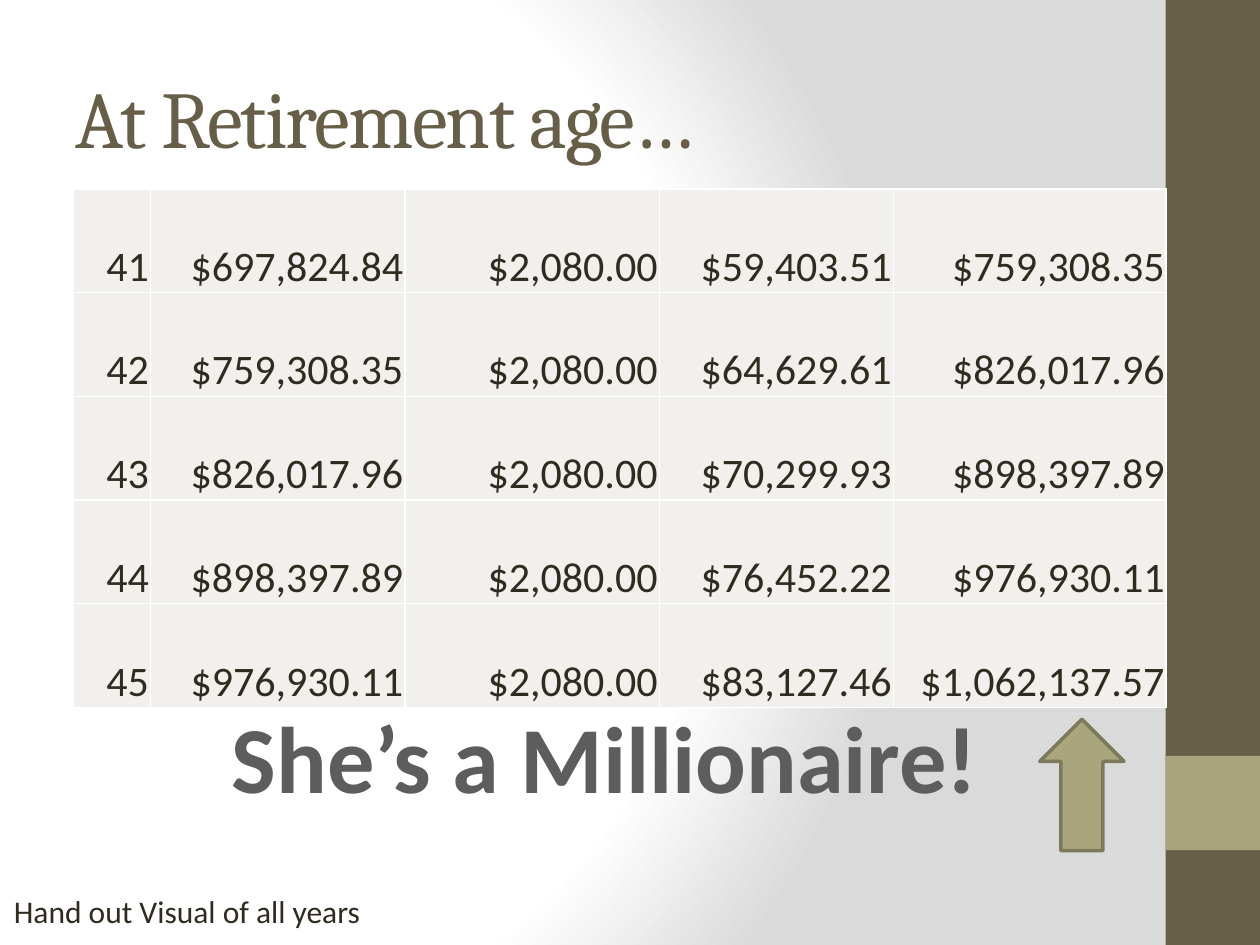
import lxml.etree
import pptx
import pptx.dml.color
import pptx.enum.shapes
import pptx.enum.text
import pptx.oxml
import pptx.oxml.ns
import pptx.util

Cm = pptx.util.Cm
Pt = pptx.util.Pt
ALIGN = pptx.enum.text.PP_ALIGN
ANCHOR = pptx.enum.text.MSO_ANCHOR
AUTO_SIZE = pptx.enum.text.MSO_AUTO_SIZE
SHAPE = pptx.enum.shapes.MSO_SHAPE

TITLE = "At Retirement age…"
HEADLINE = "She’s a Millionaire!"
HANDOUT_NOTE = "Hand out Visual of all years"
# Year, opening balance, deposit, interest, closing balance
SAVINGS = [
    ("41", "$697,824.84", "$2,080.00", "$59,403.51", "$759,308.35"),
    ("42", "$759,308.35", "$2,080.00", "$64,629.61", "$826,017.96"),
    ("43", "$826,017.96", "$2,080.00", "$70,299.93", "$898,397.89"),
    ("44", "$898,397.89", "$2,080.00", "$76,452.22", "$976,930.11"),
    ("45", "$976,930.11", "$2,080.00", "$83,127.46", "$1,062,137.57"),
]
COLUMN_WIDTHS = (1.55, 5.13, 5.13, 4.72, 5.5)
ROW_HEIGHT = 2.09

COLORS = {
    "brown": "675E47",
    "olive": "A9A57C",
    "olive_line": "7D7A5C",
    "text": "2F2B20",
    "cell": "F1F0EC",
    "white": "FFFFFF",
}
BACKGROUND_STOPS = [(0, "FFFFFF"), (75, "FFFFFF"), (100, "DADADA")]
HEADLINE_STOPS = [(0, "555555"), (49, "5D5D5D"), (50, "000000"), (95, "000000"), (100, "000000")]
BACKGROUND_PATH = '<a:path path="circle"><a:fillToRect l="20000" t="50000" r="100000" b="50000"/></a:path>'
HEADLINE_DIRECTION = '<a:lin ang="5400000" scaled="0"/>'


def rgb(name):
    return pptx.dml.color.RGBColor.from_string(COLORS[name])


def gradient(stops, direction):
    stop_xml = "".join(
        f'<a:gs pos="{position * 1000}"><a:srgbClr val="{color}"/></a:gs>' for position, color in stops
    )
    return pptx.oxml.parse_xml(
        f'<a:gradFill {pptx.oxml.ns.nsdecls("a")} rotWithShape="1">'
        f"<a:gsLst>{stop_xml}</a:gsLst>{direction}</a:gradFill>"
    )


def solid_line(tag, points, color):
    return pptx.oxml.parse_xml(
        f'<a:{tag} {pptx.oxml.ns.nsdecls("a")} w="{Pt(points)}">'
        f'<a:solidFill><a:srgbClr val="{COLORS[color]}"/></a:solidFill></a:{tag}>'
    )


def format_text(paragraph, font_name, size, color=None, align=ALIGN.LEFT):
    """Format every run; without a color the run keeps its own fill."""
    paragraph.alignment = align
    for run in paragraph.runs:
        run.font.name = font_name
        run.font.size = Pt(size)
        if color:
            run.font.color.rgb = rgb(color)


def add_block(slide, preset, box, color):
    shape = slide.shapes.add_shape(preset, *map(Cm, box))
    shape.shadow.inherit = False
    shape.fill.solid()
    shape.fill.fore_color.rgb = rgb(color)
    shape.line.fill.background()
    return shape


def add_text(slide, box, text, wrap):
    text_frame = slide.shapes.add_textbox(*map(Cm, box)).text_frame
    text_frame.word_wrap = wrap
    text_frame.auto_size = AUTO_SIZE.SHAPE_TO_FIT_TEXT
    text_frame.text = text
    return text_frame.paragraphs[0]


def set_background(slide):
    slide.background.fill.solid()
    solid_fill = next(slide.background._cSld.iter(pptx.oxml.ns.qn("a:solidFill")))
    solid_fill.getparent().replace(solid_fill, gradient(BACKGROUND_STOPS, BACKGROUND_PATH))


def add_title(slide):
    title = slide.shapes.title
    title.left, title.top, title.width, title.height = map(Cm, (1.27, 0.76, 21.17, 3.18))
    title.text_frame.text = TITLE
    title.text_frame.vertical_anchor = ANCHOR.MIDDLE
    paragraph = title.text_frame.paragraphs[0]
    format_text(paragraph, "Cambria", 46, "brown")
    paragraph.runs[0].font._element.set("spc", "-100")


def add_headline(slide):
    paragraph = add_text(slide, (4.34, 13.97, 15.72, 2.57), HEADLINE, wrap=False)
    format_text(paragraph, "Calibri", 54, align=ALIGN.CENTER)
    font = paragraph.runs[0].font
    font.bold = True
    font._element.insert(0, solid_line("ln", 1.4, "white"))
    font._element.insert(1, gradient(HEADLINE_STOPS, HEADLINE_DIRECTION))


def format_cell(cell, text):
    cell.text = text
    cell.vertical_anchor = ANCHOR.BOTTOM
    cell.margin_left = cell.margin_right = cell.margin_top = Cm(0.03)
    cell.margin_bottom = 0
    for side in ("lnL", "lnR", "lnT", "lnB"):
        cell._tc.get_or_add_tcPr().append(solid_line(side, 1, "white"))
    cell.fill.solid()
    cell.fill.fore_color.rgb = rgb("cell")
    format_text(cell.text_frame.paragraphs[0], "Calibri", 24, "text", ALIGN.RIGHT)


def add_savings_table(slide):
    size = (sum(COLUMN_WIDTHS), ROW_HEIGHT * len(SAVINGS))
    table = slide.shapes.add_table(
        len(SAVINGS), len(COLUMN_WIDTHS), Cm(1.48), Cm(3.81), *map(Cm, size)
    ).table
    table.first_row = table.horz_banding = False
    for column, width in zip(table.columns, COLUMN_WIDTHS):
        column.width = Cm(width)
    for row, values in zip(table.rows, SAVINGS):
        row.height = Cm(ROW_HEIGHT)
        for cell, value in zip(row.cells, values):
            format_cell(cell, value)


def main():
    presentation = pptx.Presentation()
    presentation.slide_width, presentation.slide_height = Cm(25.4), Cm(19.05)
    slide = presentation.slides.add_slide(presentation.slide_layouts.get_by_name("Title Only"))

    set_background(slide)
    add_block(slide, SHAPE.RECTANGLE, (23.5, 0, 1.9, 19.05), "brown")
    add_block(slide, SHAPE.RECTANGLE, (23.5, 15.24, 1.9, 1.9), "olive")
    add_title(slide)
    arrow = add_block(slide, SHAPE.UP_ARROW, (20.96, 14.5, 1.7, 2.65), "olive")
    arrow.line.color.rgb = rgb("olive_line")
    arrow.line.width = Pt(2)
    add_headline(slide)
    note = add_text(slide, (0.03, 17.86, 8.18, 1.07), HANDOUT_NOTE, wrap=True)
    format_text(note, "Calibri", 18, "text")
    add_savings_table(slide)

    presentation.save("out.pptx")


if __name__ == "__main__":
    main()
